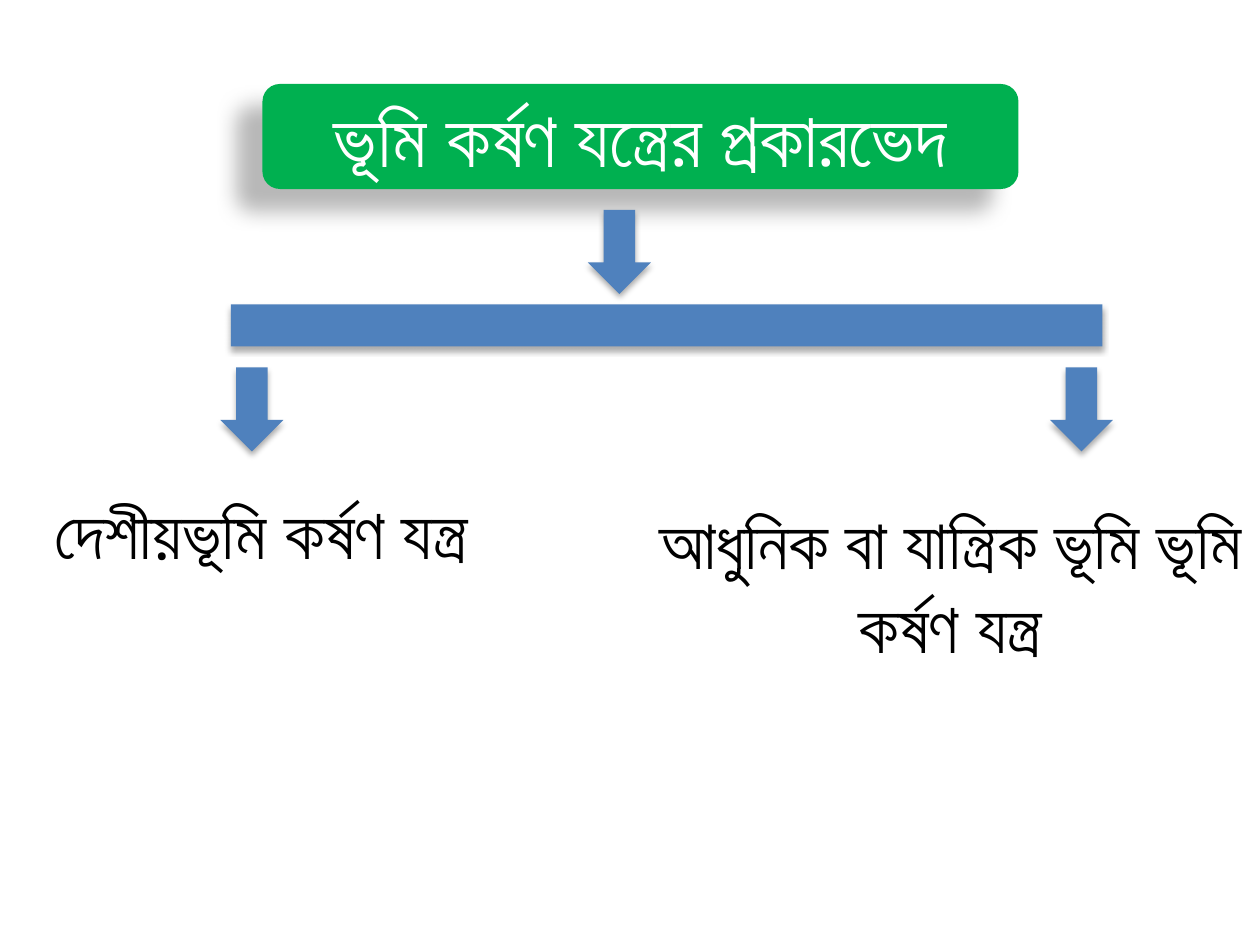
import pptx
import pptx.util
import pptx.dml.color
import pptx.enum.shapes
import pptx.enum.text
import pptx.oxml
import pptx.oxml.ns

Pt = pptx.util.Pt
SHAPE = pptx.enum.shapes.MSO_SHAPE
ALIGN = pptx.enum.text.PP_ALIGN

COLORS = {"heading": "00B050", "connector": "4F81BD", "light": "FFFFFF",
          "dark": "000000", "shadow": "000000"}
# Opacity in percent, blur and distance in points, direction in degrees
HEADING_SHADOW = (28, 11.8, 19.7, 141)
CONNECTOR_SHADOW = (32, 3.5, 2.2, 90)


class Diagram:
    font_name = "Lato"
    arrow_size = (36, 48)

    def __init__(self, page):
        self.page = page

    def color(self, name):
        return pptx.dml.color.RGBColor.from_string(COLORS[name])

    def shape(self, kind, left, top, width, height, fill, shadow):
        shape = self.page.shapes.add_shape(
            kind, Pt(left), Pt(top), Pt(width), Pt(height))
        shape.fill.solid()
        shape.fill.fore_color.rgb = self.color(fill)
        shape.line.fill.background()
        self.add_shadow(shape, *shadow)
        return shape

    def add_shadow(self, shape, opacity, blur, distance, angle):
        shape.shadow.inherit = False
        effects = shape._element.spPr.find(pptx.oxml.ns.qn("a:effectLst"))
        effects.append(pptx.oxml.parse_xml(
            f'<a:outerShdw {pptx.oxml.ns.nsdecls("a")} blurRad="{Pt(blur)}" '
            f'dist="{Pt(distance)}" dir="{angle * 60000}" rotWithShape="0">'
            f'<a:srgbClr val="{COLORS["shadow"]}">'
            f'<a:alpha val="{opacity * 1000}"/></a:srgbClr></a:outerShdw>'))

    def set_text(self, frame, text, size, color, align):
        frame.word_wrap = True
        para = frame.paragraphs[0]
        para.text = text
        para.alignment = align
        para.font.name = self.font_name
        para.font.size = Pt(size)
        para.font.color.rgb = self.color(color)

    def heading(self, text, left, top, width, height):
        box = self.shape(SHAPE.ROUNDED_RECTANGLE, left, top, width, height,
                         "heading", HEADING_SHADOW)
        box.text_frame.vertical_anchor = pptx.enum.text.MSO_ANCHOR.MIDDLE
        self.set_text(box.text_frame, text, 44, "light", ALIGN.CENTER)

    def bar(self, left, top, width, height):
        self.shape(SHAPE.RECTANGLE, left, top, width, height,
                   "connector", CONNECTOR_SHADOW)

    def arrow(self, left, top):
        self.shape(SHAPE.DOWN_ARROW, left, top, *self.arrow_size,
                   "connector", CONNECTOR_SHADOW)

    def label(self, text, left, top, width, height, align):
        box = self.page.shapes.add_textbox(
            Pt(left), Pt(top), Pt(width), Pt(height))
        self.set_text(box.text_frame, text, 40, "dark", align)
        box.text_frame.auto_size = pptx.enum.text.MSO_AUTO_SIZE.SHAPE_TO_FIT_TEXT


def main():
    deck = pptx.Presentation()
    deck.slide_width, deck.slide_height = Pt(720), Pt(540)
    page = deck.slides.add_slide(deck.slide_layouts[6])
    diagram = Diagram(page)

    # Heading and the bar it branches from
    diagram.heading("ভূমি কর্ষণ যন্ত্রের প্রকারভেদ", 150, 48, 432, 60)
    diagram.arrow(336, 120)
    diagram.bar(132, 174, 498, 24)

    # Two branches
    for left in (126, 600):
        diagram.arrow(left, 210)
    diagram.label("দেশীয়ভূমি কর্ষণ যন্ত্র", 24, 276, 264, 55.5, ALIGN.LEFT)
    diagram.label("আধুনিক বা যান্ত্রিক ভূমি ভূমি কর্ষণ যন্ত্র",
                  366, 282, 354, 104.5, ALIGN.CENTER)

    deck.save("out.pptx")


if __name__ == "__main__":
    main()
